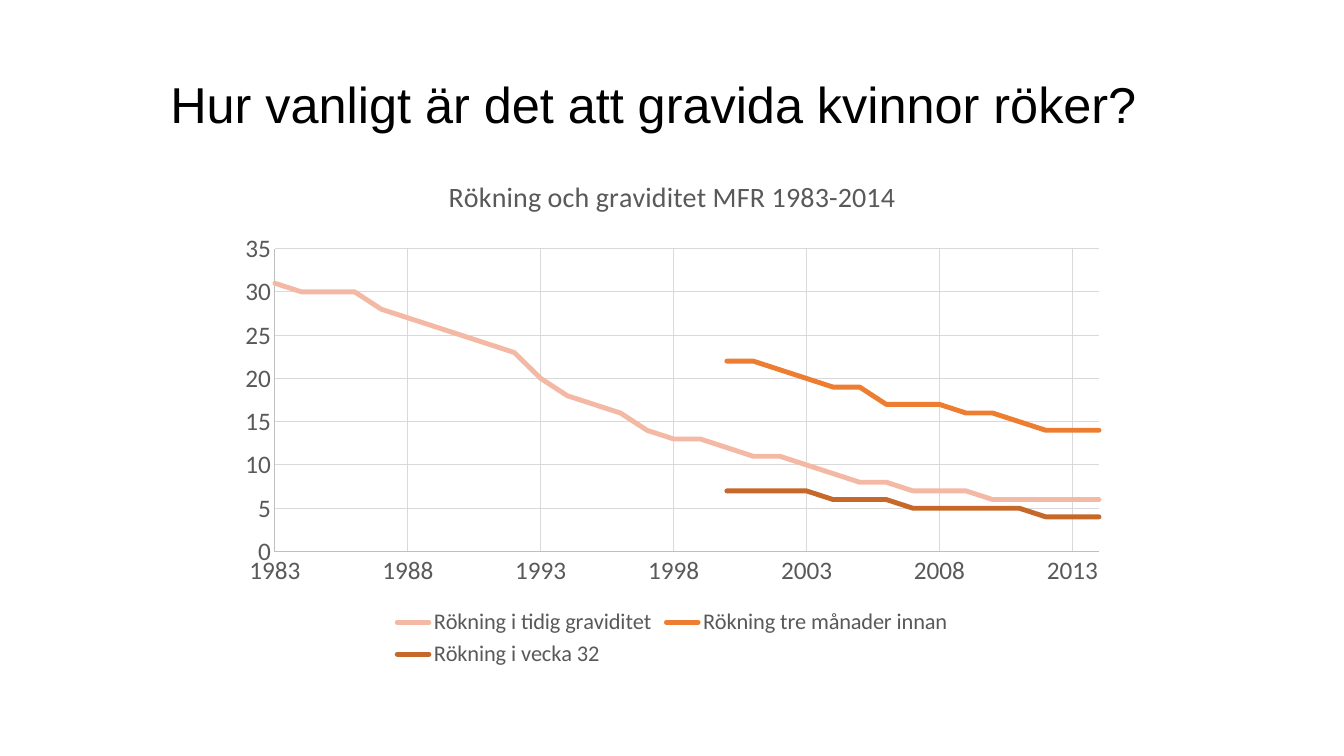
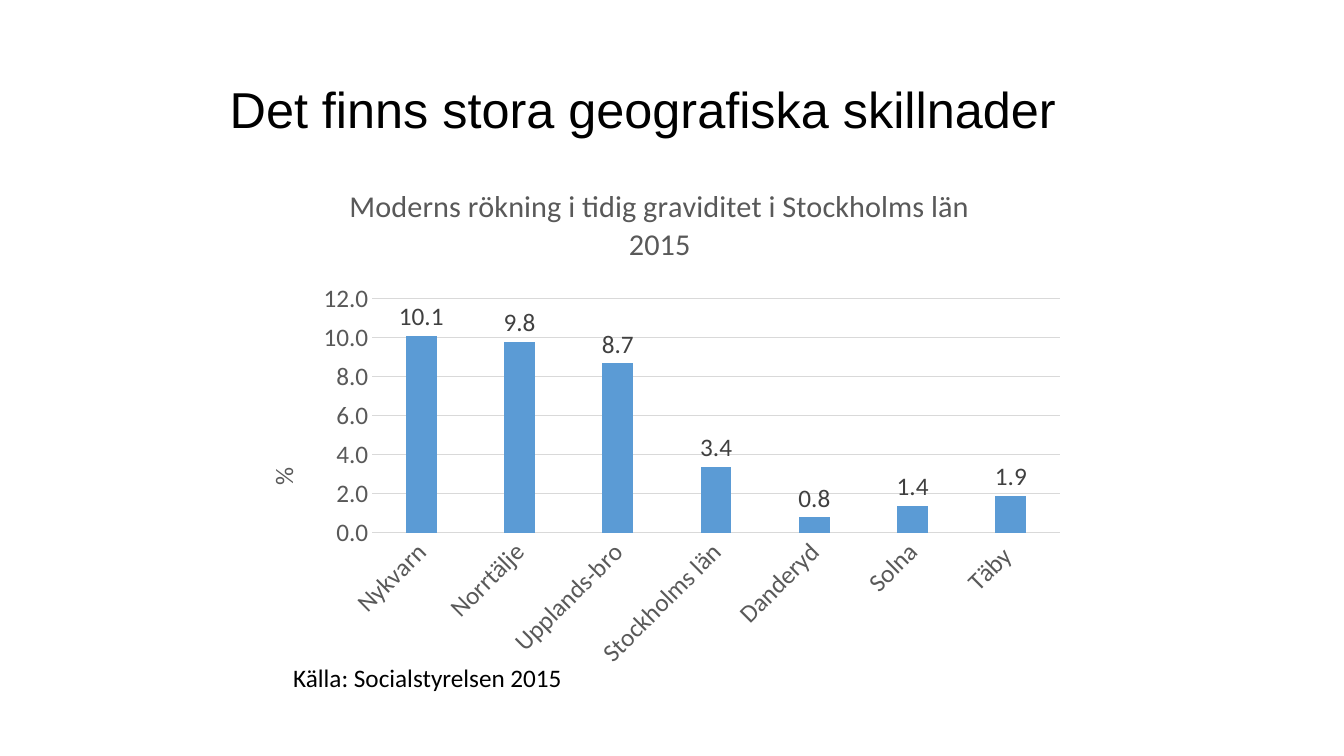
from dataclasses import dataclass

import pptx
import pptx.chart.data
import pptx.dml.color
import pptx.enum.chart
import pptx.enum.text
import pptx.oxml
import pptx.oxml.ns
import pptx.util

COLORS = {
    "text": "000000", "muted": "595959", "label": "404040",
    "grid": "D9D9D9", "axis": "BFBFBF", "early": "F3B9A4",
    "before": "ED7D31", "week32": "C56829", "bar": "5B9BD5",
}
TITLE_FONT, BODY_FONT = "Arial", "Calibri"
SLIDE_W, SLIDE_H = pptx.util.Inches(13.33), pptx.util.Inches(7.5)
AXIS_SIZE = 18
FIRST_YEAR, LAST_YEAR = 1983, 2014


@dataclass(frozen=True)
class Box:
    """A frame in percent of the slide's width and height."""
    left: float
    top: float
    width: float
    height: float

    def emu(self) -> tuple[int, int, int, int]:
        return (int(SLIDE_W * self.left / 100), int(SLIDE_H * self.top / 100),
                int(SLIDE_W * self.width / 100), int(SLIDE_H * self.height / 100))


@dataclass(frozen=True)
class Trend:
    """Yearly percentages that end in the last year."""
    name: str
    color: str
    values: tuple[int, ...]


TRENDS = (
    Trend("Rökning i tidig graviditet", "early", (
        31, 30, 30, 30, 28, 27, 26, 25, 24, 23, 20, 18, 17, 16, 14, 13,
        13, 12, 11, 11, 10, 9, 8, 8, 7, 7, 7, 6, 6, 6, 6, 6)),
    Trend("Rökning tre månader innan", "before", (
        22, 22, 21, 20, 19, 19, 17, 17, 17, 16, 16, 15, 14, 14, 14)),
    Trend("Rökning i vecka 32", "week32", (
        7, 7, 7, 7, 6, 6, 6, 5, 5, 5, 5, 5, 4, 4, 4)),
)
REGIONS = {
    "Nykvarn": 10.1, "Norrtälje": 9.8, "Upplands-bro": 8.7,
    "Stockholms län": 3.4, "Danderyd": 0.8, "Solna": 1.4, "Täby ": 1.9,
}


def rgb(name: str) -> pptx.dml.color.RGBColor:
    return pptx.dml.color.RGBColor.from_string(COLORS[name])


def style_font(font, size: float, color: str, name: str = BODY_FONT) -> None:
    font.size, font.name, font.bold = pptx.util.Pt(size), name, False
    font.color.rgb = rgb(color)


def style_line(line, color: str, width: float = 0.75) -> None:
    line.color.rgb = rgb(color)
    line.width = pptx.util.Pt(width)


def add_run(tf, text: str, size: float, color: str, name: str = BODY_FONT) -> None:
    r = tf.paragraphs[0].add_run()
    r.text = text
    style_font(r.font, size, color, name)


def add_text(slide, box: Box, text: str, size: float, name: str = BODY_FONT,
             anchor=pptx.enum.text.MSO_ANCHOR.TOP, spacing: float = 1.0) -> None:
    tf = slide.shapes.add_textbox(*box.emu()).text_frame
    tf.word_wrap = True
    tf.vertical_anchor = anchor
    tf.paragraphs[0].line_spacing = spacing
    add_run(tf, text, size, "text", name)


def add_title(slide, box: Box, text: str, spacing: float = 1.0) -> None:
    add_text(slide, box, text, 36, TITLE_FONT,
             pptx.enum.text.MSO_ANCHOR.MIDDLE, spacing)


def set_layout(parent, index: int, **shares: float) -> None:
    """Fix a chart part's place, in shares of the chart."""
    for old in parent.xpath("c:layout"):
        parent.remove(old)
    target = '<c:layoutTarget val="inner"/>' if "w" in shares else ""
    modes = "".join(f'<c:{k}Mode val="edge"/>' for k in ("x", "y"))
    sizes = "".join(f'<c:{k} val="{v}"/>' for k, v in shares.items())
    parent.insert(index, pptx.oxml.parse_xml(
        f'<c:layout {pptx.oxml.ns.nsdecls("c")}><c:manualLayout>'
        f"{target}{modes}{sizes}</c:manualLayout></c:layout>"))


def add_chart(slide, box: Box, kind, data, title: str, title_size: float):
    """Add a chart with the title, axis and grid style of the deck."""
    chart = slide.shapes.add_chart(kind, *box.emu(), data).chart
    style_font(chart.font, AXIS_SIZE, "text")
    chart.has_title = True
    add_run(chart.chart_title.text_frame, title, title_size, "muted")
    chart.has_legend = False
    for axis in (chart.category_axis, chart.value_axis):
        axis.major_tick_mark = pptx.enum.chart.XL_TICK_MARK.NONE
        axis.minor_tick_mark = pptx.enum.chart.XL_TICK_MARK.NONE
        style_font(axis.tick_labels.font, AXIS_SIZE, "muted")
    chart.value_axis.has_major_gridlines = True
    style_line(chart.value_axis.major_gridlines.format.line, "grid")
    return chart


def build_trend_slide(slide) -> None:
    add_title(slide, Box(11.93, 8.93, 74.85, 9.47),
              "Hur vanligt är det att gravida kvinnor röker?")
    data = pptx.chart.data.XyChartData()
    years_shown = range(FIRST_YEAR, LAST_YEAR + 1)
    for trend in TRENDS:
        s = data.add_series(trend.name)
        missing = (None,) * (len(years_shown) - len(trend.values))
        for year, value in zip(years_shown, missing + trend.values):
            s.add_data_point(year, value)
    chart = add_chart(
        slide, Box(16.95, 20.67, 66.15, 68.27),
        pptx.enum.chart.XL_CHART_TYPE.XY_SCATTER_LINES_NO_MARKERS, data,
        "Rökning och graviditet MFR 1983-2014", 20)
    set_layout(chart.element.xpath("//c:plotArea")[0], 0,
               x=0.053, y=0.179, w=0.927, h=0.587)

    # Years without a value stay blank
    for pt in chart.element.xpath("//c:yVal//c:pt[c:v='None']"):
        pt.getparent().remove(pt)

    # Axes: five-year and five-percent steps
    years, shares = chart.category_axis, chart.value_axis
    years.minimum_scale, years.maximum_scale = FIRST_YEAR, LAST_YEAR
    shares.minimum_scale, shares.maximum_scale = 0, 35
    years.has_major_gridlines = True
    style_line(years.major_gridlines.format.line, "grid")
    for axis in (years, shares):
        axis.major_unit = 5
        style_line(axis.format.line, "axis")
        axis.tick_labels.number_format = "General"
        axis.tick_labels.number_format_is_linked = False

    # Curves
    for s, trend in zip(chart.plots[0].series, TRENDS):
        style_line(s.format.line, trend.color, 3.5)
        s.smooth = False
    for ln in chart.element.xpath("//c:ser/c:spPr/a:ln"):
        ln.set("cap", "rnd")
    chart.plots[0].vary_by_categories = False

    # Legend
    chart.has_legend = True
    chart.legend.position = pptx.enum.chart.XL_LEGEND_POSITION.BOTTOM
    chart.legend.include_in_layout = False
    style_font(chart.legend.font, 16, "muted")


def build_region_slide(slide) -> None:
    add_title(slide, Box(16.35, 9.07, 69.68, 11.6),
              "Det finns stora geografiska skillnader", 0.9)
    add_text(slide, Box(21.08, 86.93, 51.38, 5.33),
             "Källa: Socialstyrelsen 2015", 18)
    data = pptx.chart.data.CategoryChartData(number_format="0.0")
    data.categories = list(REGIONS)
    data.add_series("Series 1", list(REGIONS.values()))
    chart = add_chart(
        slide, Box(18.08, 21.6, 62.03, 68),
        pptx.enum.chart.XL_CHART_TYPE.COLUMN_CLUSTERED, data,
        "Moderns rökning i tidig graviditet i Stockholms län 2015", 21.6)
    set_layout(chart.element.xpath("//c:plotArea")[0], 0,
               x=0.155, y=0.264, w=0.825, h=0.455)

    # Axes: slanted names, percent scale
    style_line(chart.category_axis.format.line, "grid")
    chart.element.xpath("//c:catAx/c:txPr/a:bodyPr")[0].set("rot", "-2700000")
    shares = chart.value_axis
    shares.minimum_scale, shares.maximum_scale, shares.major_unit = 0, 12, 2
    shares.format.line.fill.background()
    shares.tick_labels.number_format = "0.0"
    shares.tick_labels.number_format_is_linked = False
    shares.has_title = True
    add_run(shares.axis_title.text_frame, "%", AXIS_SIZE, "muted")
    chart.element.xpath("//c:valAx/c:title//a:bodyPr")[0].set("rot", "-5400000")
    set_layout(chart.element.xpath("//c:valAx/c:title")[0], 1, x=0.022, y=0.582)

    # Columns and their values
    plot = chart.plots[0]
    plot.vary_by_categories = False
    plot.gap_width, plot.overlap = 219, -27
    fill = plot.series[0].format.fill
    fill.solid()
    fill.fore_color.rgb = rgb("bar")
    plot.has_data_labels = True
    labels = plot.data_labels
    labels.show_value = True
    labels.number_format, labels.number_format_is_linked = "0.0", False
    labels.position = pptx.enum.chart.XL_LABEL_POSITION.OUTSIDE_END
    style_font(labels.font, AXIS_SIZE, "label")


def main() -> None:
    prs = pptx.Presentation()
    prs.slide_width, prs.slide_height = SLIDE_W, SLIDE_H
    for build in (build_trend_slide, build_region_slide):
        build(prs.slides.add_slide(prs.slide_layouts[6]))
    prs.save("out.pptx")


if __name__ == "__main__":
    main()
